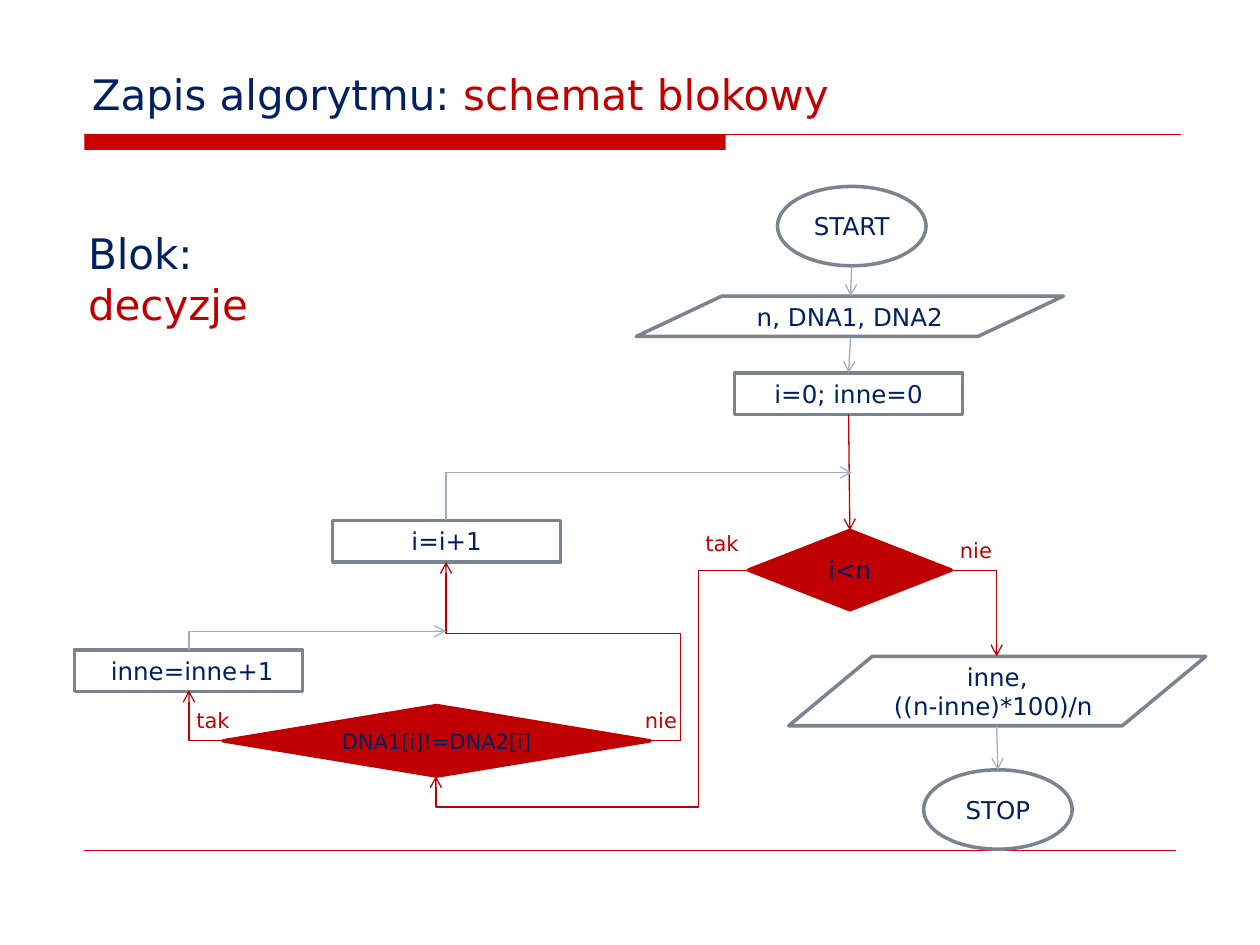
from pptx import Presentation
from pptx.dml.color import RGBColor
from pptx.enum.shapes import MSO_CONNECTOR, MSO_SHAPE
from pptx.enum.text import MSO_ANCHOR, PP_ALIGN
from pptx.oxml.ns import qn
from pptx.util import Inches, Pt
from lxml.etree import SubElement

FONT = "DejaVu Sans"
COLORS = {"navy": "002060", "red": "C00000", "rule": "CC0000",
          "gray": "79848F", "pale": "9FAEBD"}

OVAL = MSO_SHAPE.FLOWCHART_CONNECTOR
DATA = MSO_SHAPE.FLOWCHART_DATA
STEP = MSO_SHAPE.FLOWCHART_PROCESS
TEST = MSO_SHAPE.FLOWCHART_DECISION

SIZES = {OVAL: (1.18, 0.63), STEP: (1.81, 0.33)}


def color(name):
    return RGBColor.from_string(COLORS[name])


def style(run, size, name):
    run.font.name = FONT
    run.font.size = Pt(size)
    run.font.color.rgb = color(name)


def node(slide, kind, left, top, text, dims=None, size=14):
    """Add one block of the flowchart."""
    width, height = dims or SIZES[kind]
    shape = slide.shapes.add_shape(
        kind, Inches(left), Inches(top), Inches(width), Inches(height))
    shape.shadow.inherit = False
    shape.line.width = Pt(2)
    if kind == TEST:
        shape.fill.solid()
        shape.fill.fore_color.rgb = color("red")
        shape.line.color.rgb = color("red")
    else:
        shape.fill.background()
        shape.line.color.rgb = color("gray")

    frame = shape.text_frame
    frame.text = text
    frame.word_wrap = True
    frame.vertical_anchor = MSO_ANCHOR.MIDDLE
    if kind != OVAL:
        frame.margin_left = frame.margin_right = Inches(0.04)
        frame.margin_top = frame.margin_bottom = Inches(0.04)
    for para in frame.paragraphs:
        para.alignment = PP_ALIGN.CENTER
        for run in para.runs:
            style(run, size, "navy")
    return shape


def label(slide, left, top, width, height, lines, size=12):
    """Add a text box; each line is a list of (text, color) parts."""
    box = slide.shapes.add_textbox(
        Inches(left), Inches(top), Inches(width), Inches(height))
    frame = box.text_frame
    frame.word_wrap = True
    for i, parts in enumerate(lines):
        para = frame.add_paragraph() if i else frame.paragraphs[0]
        for text, name in parts:
            run = para.add_run()
            run.text = text
            style(run, size, name)
    return frame


def line(slide, start, end, name, width=0.75, kind=MSO_CONNECTOR.STRAIGHT):
    """Add a plain connector."""
    link = slide.shapes.add_connector(
        kind, *[Inches(v) for v in (*start, *end)])
    link.line.width = Pt(width)
    link.line.color.rgb = color(name)
    SubElement(link._element.spPr, qn("a:effectLst"))
    return link


def arrow(slide, start, end, name="pale", kind=MSO_CONNECTOR.STRAIGHT):
    """Add a connector with an open arrowhead at its end."""
    link = line(slide, start, end, name, kind=kind)
    SubElement(link.line._get_or_add_ln(), qn("a:tailEnd"), type="arrow")
    return link


def bend(slide, start, end, name="red", adj=()):
    """Add an elbow arrow that leaves sideways and arrives vertically."""
    link = arrow(slide, start, end, name, MSO_CONNECTOR.ELBOW)
    geom = link._element.spPr.find(qn("a:prstGeom"))
    geom.set("prst", f"bentConnector{2 + len(adj)}")
    guides = geom.find(qn("a:avLst"))
    if guides is None:
        guides = SubElement(geom, qn("a:avLst"))
    for i, part in enumerate(adj, 1):
        SubElement(guides, qn("a:gd"), name=f"adj{i}",
                   fmla=f"val {round(part * 100000)}")
    return link


def rise(slide, start, end):
    """Add an elbow arrow that goes up, then right: a bend turned by 270."""
    (x1, y1), (x2, y2) = start, end
    mid_x, mid_y = (x1 + x2) / 2, (y1 + y2) / 2
    half_w, half_h = (y1 - y2) / 2, (x2 - x1) / 2
    link = bend(slide, (mid_x - half_w, mid_y - half_h),
                (mid_x + half_w, mid_y + half_h), "pale")
    link._element.spPr.find(qn("a:xfrm")).set("rot", str(270 * 60000))


def header(slide):
    """Add the title, the side heading and the rules."""
    bar = slide.shapes.add_shape(MSO_SHAPE.RECTANGLE, Inches(0.67),
                                 Inches(1.07), Inches(5.09), Inches(0.12))
    bar.shadow.inherit = False
    bar.fill.solid()
    bar.fill.fore_color.rgb = color("rule")
    bar.line.fill.background()
    line(slide, (0.67, 1.07), (9.37, 1.07), "rule")
    line(slide, (0.67, 6.75), (9.33, 6.75), "rule", 0.25)

    title = label(slide, 0.63, 0.33, 8.75, 0.66,
                  [[("Zapis algorytmu: ", "navy"),
                    ("schemat blokowy", "red")]], 24)
    title.vertical_anchor = MSO_ANCHOR.BOTTOM
    label(slide, 0.6, 1.76, 1.55, 0.91,
          [[("Blok:", "navy")], [("decyzje", "red")]], 24)


def chart(slide):
    """Add the blocks, the arrows and the branch labels."""
    # Blocks
    node(slide, OVAL, 6.17, 1.48, "START")
    node(slide, DATA, 5.05, 2.35, "n, DNA1, DNA2", (3.39, 0.32))
    init = node(slide, STEP, 5.83, 2.96, "i=0; inne=0")
    loop = node(slide, TEST, 5.94, 4.21, "i<n", (1.61, 0.63))
    node(slide, TEST, 1.77, 5.6, "DNA1[i]!=DNA2[i]", (3.39, 0.56), 12)
    node(slide, STEP, 0.59, 5.16, " inne=inne+1")
    node(slide, STEP, 2.64, 4.13, "i=i+1")
    node(slide, DATA, 6.26, 5.21, "inne,\n((n-inne)*100)/n ", (3.31, 0.55))
    node(slide, OVAL, 7.33, 6.11, "STOP")

    # Straight arrows
    arrow(slide, (6.76, 2.11), (6.75, 2.35))
    arrow(slide, (6.75, 2.68), (6.74, 2.96)).end_connect(init, 0)
    down = arrow(slide, (6.74, 3.29), (6.75, 4.21), "red")
    down.begin_connect(init, 2)
    down.end_connect(loop, 0)
    arrow(slide, (7.91, 5.76), (7.92, 6.11))

    # Branches of the two decisions
    bend(slide, (7.56, 4.53), (7.91, 5.21))
    bend(slide, (5.94, 4.53), (3.46, 6.16), adj=(0.16, 1.15))
    bend(slide, (1.77, 5.88), (1.5, 5.48))
    bend(slide, (5.16, 5.88), (3.54, 4.46), adj=(-0.15, 0.6))

    # Ways back into the loop
    rise(slide, (1.5, 5.16), (3.54, 5.01))
    rise(slide, (3.54, 4.13), (6.76, 3.75))

    # Branch labels
    for text, left, top in (("tak", 5.5, 4.16), ("tak", 1.46, 5.57),
                            ("nie", 7.52, 4.22), ("nie", 5.02, 5.57)):
        label(slide, left, top, 0.52, 0.3, [[(text, "red")]])


def main():
    deck = Presentation()
    deck.slide_width, deck.slide_height = Inches(10), Inches(7.5)
    slide = deck.slides.add_slide(deck.slide_layouts[6])
    header(slide)
    chart(slide)
    deck.save("out.pptx")


if __name__ == "__main__":
    main()
